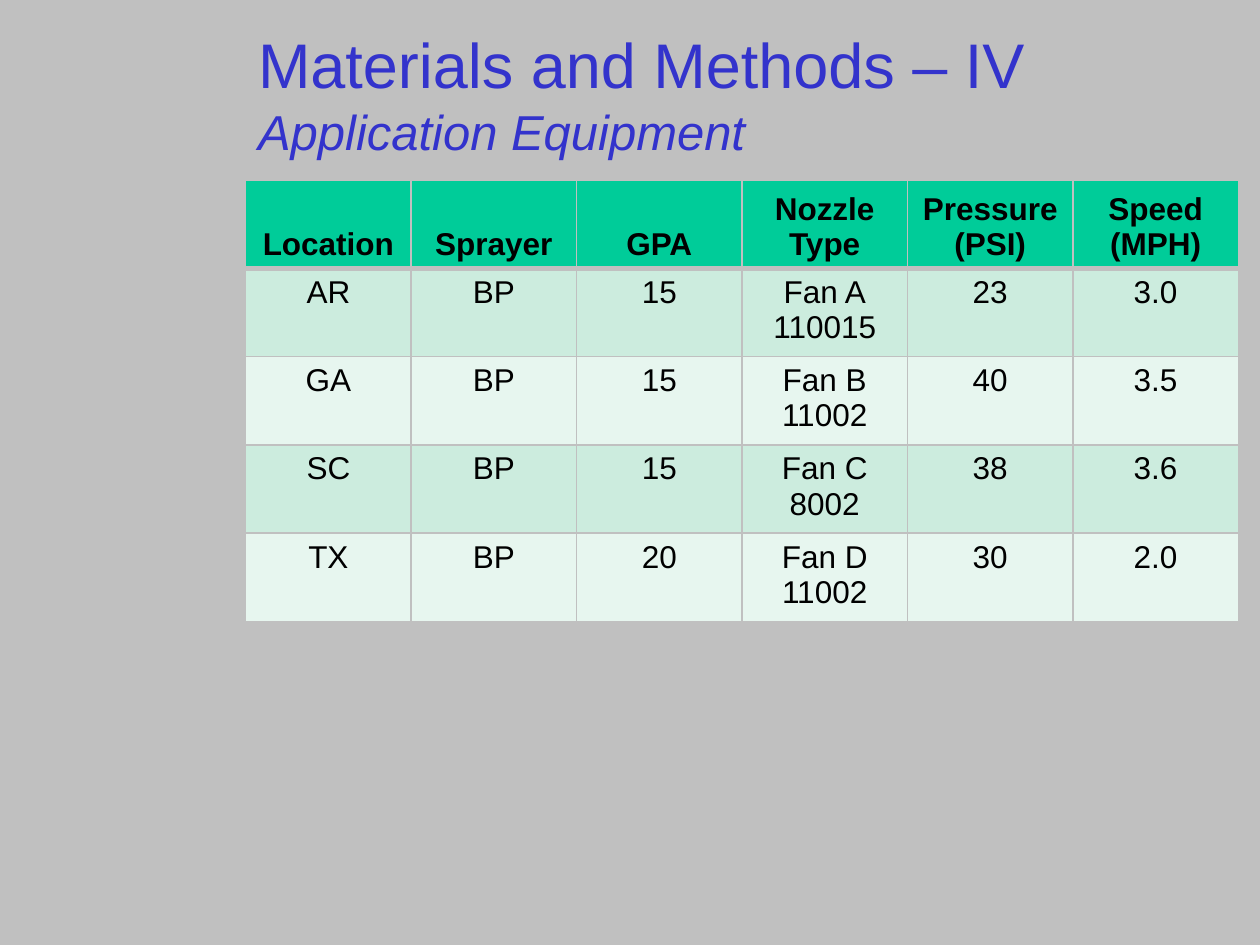
from dataclasses import dataclass

from lxml import etree
from pptx import Presentation
from pptx.dml.color import RGBColor
from pptx.enum import text
from pptx.oxml import ns
from pptx.util import Inches, Pt

WIDE, HIGH = 10, 7.5
GREY, BLUE, BLACK = "C0C0C0", "3333CC", "000000"
LEFT, TOP, SPAN, ROW = 1.95, 1.43, 7.88, 0.41


@dataclass
class Style:
    size: int
    tint: str
    bold: bool = False
    slant: bool = False


@dataclass
class Band:
    cells: list[str]
    fill: str
    style: Style
    base: int = 1
    anchor: text.MSO_ANCHOR = text.MSO_ANCHOR.TOP


HEAD = Style(18, BLACK, bold=True)
BODY = Style(18, BLACK)
MINT, PALE = "CCECDE", "E7F6EF"
BANDS = [
    Band(["Location", "Sprayer", "GPA", "Nozzle\nType", "Pressure\n(PSI)", "Speed\n(MPH)"],
         "00CC99", HEAD, 3, text.MSO_ANCHOR.BOTTOM),
    Band(["AR", "BP", "15", "Fan A\n110015", "23", "3.0"], MINT, BODY),
    Band(["GA", "BP", "15", "Fan B\n11002", "40", "3.5"], PALE, BODY),
    Band(["SC", "BP", "15", "Fan C\n8002", "38", "3.6"], MINT, BODY),
    Band(["TX", "BP", "20", "Fan D\n11002", "30", "2.0"], PALE, BODY),
]


def paint(fill, tint: str) -> None:
    fill.solid()
    fill.fore_color.rgb = RGBColor.from_string(tint)


def write(para, words: str, style: Style) -> None:
    run = para.add_run()
    run.text = words
    font = run.font
    font.name, font.size = "Arial", Pt(style.size)
    font.bold, font.italic = style.bold, style.slant
    paint(font.fill, style.tint)


def edge(cell, side: str, width: int) -> None:
    props = cell._tc.get_or_add_tcPr()
    line = etree.SubElement(props, ns.qn(f"a:ln{side}"), w=str(Pt(width)))
    fill = etree.SubElement(line, ns.qn("a:solidFill"))
    etree.SubElement(fill, ns.qn("a:srgbClr"), val=GREY)


def draw_cell(cell, words: str, band: Band, top: int) -> None:
    for side, width in zip("LRTB", (1, 1, top, band.base)):
        edge(cell, side, width)
    paint(cell.fill, band.fill)
    cell.vertical_anchor = band.anchor
    frame = cell.text_frame
    for i, part in enumerate(words.split("\n")):
        para = frame.add_paragraph() if i else frame.paragraphs[0]
        para.alignment = text.PP_ALIGN.CENTER
        write(para, part, band.style)


def draw_table(slide, bands: list[Band]) -> None:
    rows, cols = len(bands), len(bands[0].cells)
    table = slide.shapes.add_table(rows, cols, Inches(LEFT), Inches(TOP),
                                   Inches(SPAN), Inches(rows * ROW)).table
    top = 1
    for r, band in enumerate(bands):
        for c, words in enumerate(band.cells):
            draw_cell(table.cell(r, c), words, band, top)
        top = band.base


def draw_title(slide) -> None:
    box = slide.shapes.add_textbox(Inches(LEFT), Inches(0.11), Inches(7.97), Inches(1.25))
    frame = box.text_frame
    frame.word_wrap = True
    frame.vertical_anchor = text.MSO_ANCHOR.MIDDLE
    para = frame.paragraphs[0]
    write(para, "Materials and Methods – IV", Style(36, BLUE))
    para.add_line_break()
    write(para, "Application Equipment", Style(28, BLUE, slant=True))


def main() -> None:
    deck = Presentation()
    deck.slide_width, deck.slide_height = Inches(WIDE), Inches(HIGH)
    slide = deck.slides.add_slide(deck.slide_layouts[6])
    paint(slide.background.fill, GREY)
    draw_title(slide)
    draw_table(slide, BANDS)
    deck.save("out.pptx")


if __name__ == "__main__":
    main()
